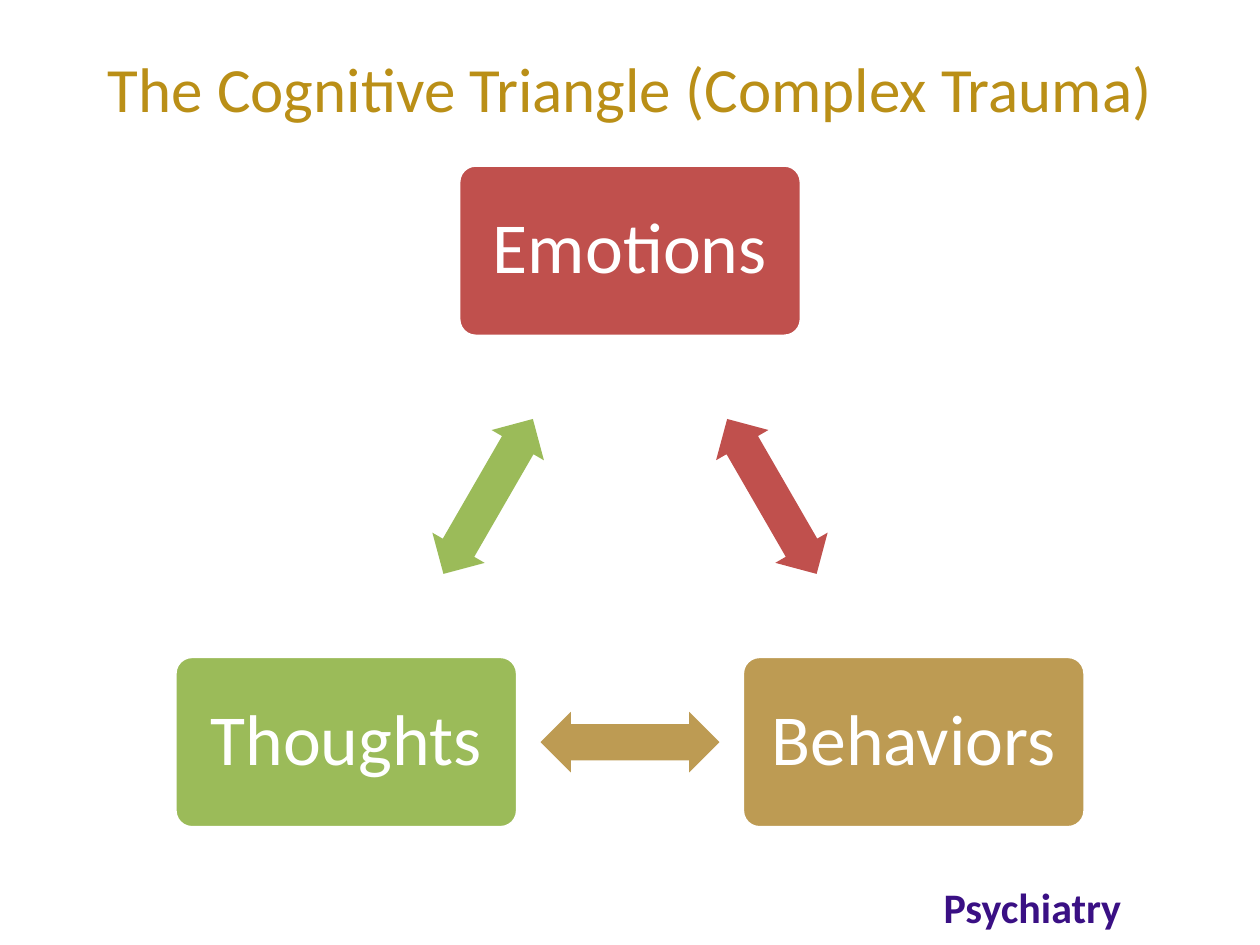
"""Build the cognitive triangle slide."""
from dataclasses import dataclass
from math import atan2, cos, degrees, radians, sin

from pptx import Presentation
from pptx.dml.color import RGBColor
from pptx.enum.shapes import MSO_SHAPE
from pptx.enum.text import MSO_ANCHOR, PP_ALIGN
from pptx.util import Inches, Pt

ROUNDED = MSO_SHAPE.ROUNDED_RECTANGLE
ARROW = MSO_SHAPE.LEFT_RIGHT_ARROW
MIDDLE = MSO_ANCHOR.MIDDLE
LEFT, CENTER = PP_ALIGN.LEFT, PP_ALIGN.CENTER

WIDTH, HEIGHT = 10, 7.5
CENTER_X, CENTER_Y, RADIUS = WIDTH / 2, 4.59, 2.6
BOX_W, BOX_H = 2.72, 1.36
ARROW_W, ARROW_H = 1.42, 0.48
FONT = "Calibri"


@dataclass
class Node:
    """A corner of the triangle, placed by its angle on the circle."""
    label: str
    angle: float
    color: str

    @property
    def x(self) -> float:
        """Return the horizontal centre."""
        return CENTER_X + RADIUS * cos(radians(self.angle))

    @property
    def y(self) -> float:
        """Return the vertical centre."""
        return CENTER_Y + RADIUS * sin(radians(self.angle))


NODES = [
    Node("Emotions", -90, "C0504D"),
    Node("Behaviors", 30, "BD9B53"),
    Node("Thoughts", 150, "9BBB59"),
]


def rgb(color: str) -> RGBColor:
    """Turn a hex string into a colour."""
    return RGBColor.from_string(color)


def write(tf, text: str, size: float, color: str, align=CENTER, bold=False) -> None:
    """Set the text of a frame and format it."""
    tf.text = text
    p = tf.paragraphs[0]
    p.alignment = align
    font = p.runs[0].font
    font.name, font.size, font.bold = FONT, Pt(size), bold
    font.color.rgb = rgb(color)


def add_centered(s, kind, x: float, y: float, w: float, h: float, color: str):
    """Add a filled shape centred on a point."""
    sp = s.shapes.add_shape(
        kind, Inches(x - w / 2), Inches(y - h / 2), Inches(w), Inches(h))
    sp.shadow.inherit = False
    sp.fill.solid()
    sp.fill.fore_color.rgb = rgb(color)
    sp.line.fill.background()
    return sp


def add_box(s, node: Node) -> None:
    """Draw the labelled box of a node."""
    sp = add_centered(s, ROUNDED, node.x, node.y, BOX_W, BOX_H, node.color)
    sp.adjustments[0] = 0.1
    sp.line.color.rgb = rgb("FFFFFF")
    sp.line.width = Pt(2)
    tf = sp.text_frame
    tf.margin_left = tf.margin_right = Inches(0.12)
    tf.margin_top = tf.margin_bottom = Inches(0.12)
    tf.vertical_anchor = MIDDLE
    write(tf, node.label, 41, "FFFFFF")
    tf.paragraphs[0].line_spacing = 0.9


def add_arrow(s, start: Node, end: Node) -> None:
    """Draw the double arrow halfway between two nodes."""
    x, y = (start.x + end.x) / 2, (start.y + end.y) / 2
    sp = add_centered(s, ARROW, x, y, ARROW_W, ARROW_H, start.color)
    sp.adjustments[0], sp.adjustments[1] = 0.6, 0.5
    sp.rotation = round(degrees(atan2(end.y - start.y, end.x - start.x))) % 360


def add_title(s, text: str) -> None:
    """Place and format the title placeholder."""
    sp = s.shapes.title
    sp.left, sp.top = Inches(0.5), Inches(0.3)
    sp.width, sp.height = Inches(WIDTH - 1), Inches(0.79)
    sp.text_frame.vertical_anchor = MIDDLE
    write(sp.text_frame, text, 36, "BA8F17")


def add_footer(s, text: str) -> None:
    """Write the department name at the bottom right."""
    sp = s.shapes.add_textbox(Inches(7.39), Inches(6.95), Inches(1.64), Inches(0.5))
    sp.text_frame.word_wrap = False
    write(sp.text_frame, text, 24, "3A1084", LEFT, True)


def main() -> None:
    """Build and save the slide."""
    prs = Presentation()
    prs.slide_width, prs.slide_height = Inches(WIDTH), Inches(HEIGHT)
    s = prs.slides.add_slide(prs.slide_layouts[5])
    add_title(s, "The Cognitive Triangle (Complex Trauma)")
    for node, following in zip(NODES, NODES[1:] + NODES[:1]):
        add_box(s, node)
        add_arrow(s, node, following)
    add_footer(s, "Psychiatry")
    prs.save("out.pptx")


if __name__ == "__main__":
    main()
